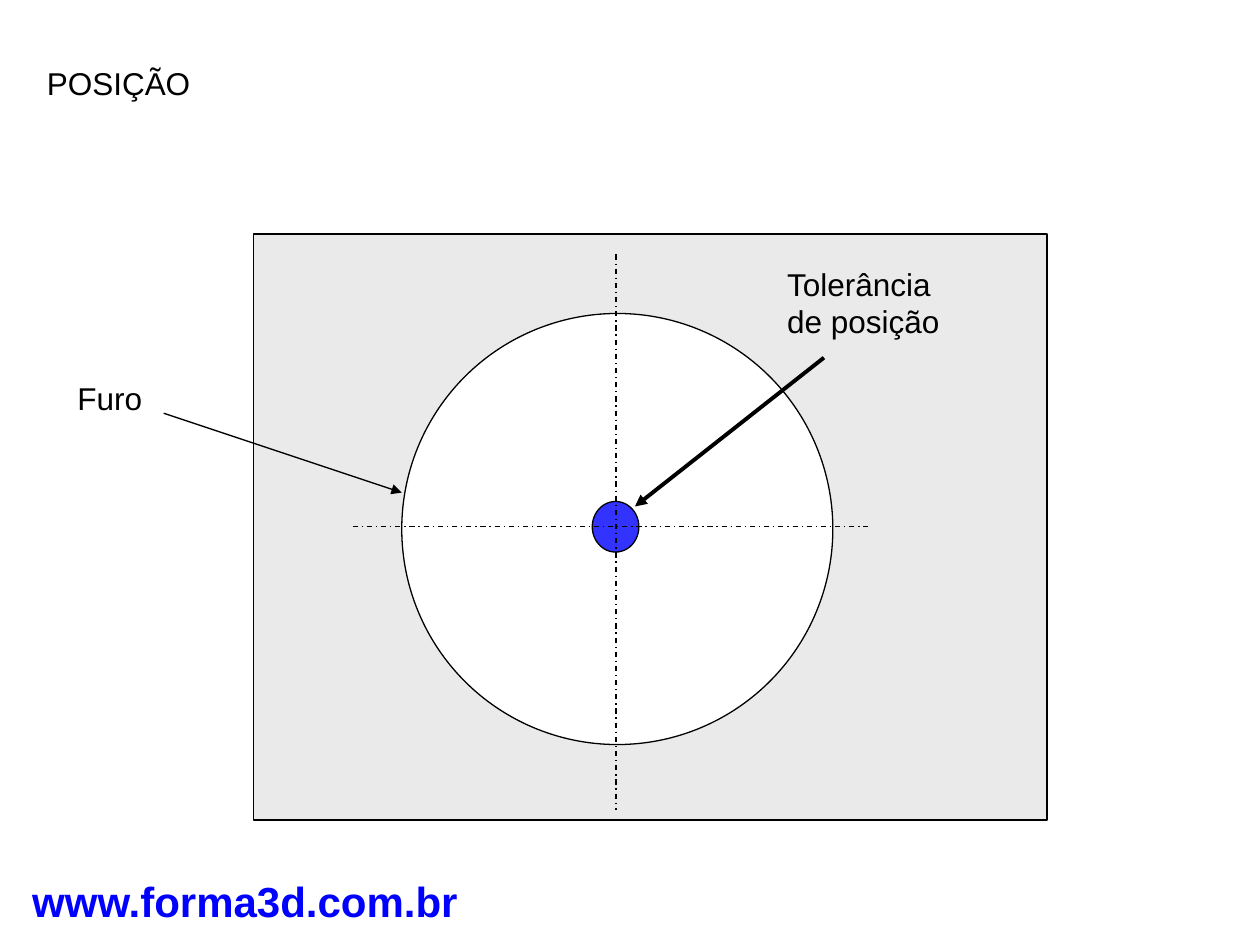
from dataclasses import dataclass

from lxml.etree import SubElement
from pptx import Presentation
from pptx.dml.color import RGBColor
from pptx.enum.dml import MSO_LINE_DASH_STYLE as Dash
from pptx.enum.shapes import MSO_CONNECTOR, MSO_SHAPE as Shape
from pptx.enum.text import MSO_ANCHOR as Anchor, PP_ALIGN as Align
from pptx.oxml.ns import qn
from pptx.util import Cm, Pt


@dataclass(frozen=True)
class Theme:
    font: str = "Arial"
    ink: str = "000000"
    plate: str = "EAEAEA"
    hole: str = "FFFFFF"
    accent: str = "0000FF"
    text_size: float = 18
    address_size: float = 24
    thin: float = 0.75
    thick: float = 2.25


class Drawing:
    def __init__(self, slide, theme):
        self.slide = slide
        self.theme = theme

    def format_text(self, box, text, align, size, color, bold, wrap):
        frame = box.text_frame
        frame.text = text
        frame.word_wrap = wrap
        frame.vertical_anchor = Anchor.TOP
        for paragraph in frame.paragraphs:
            paragraph.alignment = align
            for run in paragraph.runs:
                run.font.name = self.theme.font
                run.font.size = Pt(size)
                run.font.bold = bold
                run.font.color.rgb = RGBColor.from_string(color)

    def title(self, text, left, top, width, height):
        heading = self.slide.shapes.title
        heading.left, heading.top = Cm(left), Cm(top)
        heading.width, heading.height = Cm(width), Cm(height)
        self.format_text(heading, text, Align.LEFT, self.theme.text_size,
                         self.theme.ink, False, True)

    def label(self, text, left, top, width, height, align=Align.CENTER,
              size=None, color=None, bold=False):
        box = self.slide.shapes.add_textbox(
            Cm(left), Cm(top), Cm(width), Cm(height))
        self.format_text(box, text, align, size or self.theme.text_size,
                         color or self.theme.ink, bold, False)

    def area(self, kind, left, top, width, height, color, opacity=100):
        area = self.slide.shapes.add_shape(
            kind, Cm(left), Cm(top), Cm(width), Cm(height))
        area.shadow.inherit = False
        area.fill.solid()
        area.fill.fore_color.rgb = RGBColor.from_string(color)
        if opacity < 100:
            fill_color = area.fill._xPr.find(qn("a:solidFill"))[0]
            SubElement(fill_color, qn("a:alpha"), val=str(opacity * 1000))
        area.line.color.rgb = RGBColor.from_string(self.theme.ink)
        area.line.width = Pt(self.theme.thin)

    def line(self, start, end, weight=None, dash=None, arrow=False):
        stroke = self.slide.shapes.add_connector(
            MSO_CONNECTOR.STRAIGHT, *map(Cm, start + end))
        stroke.line.color.rgb = RGBColor.from_string(self.theme.ink)
        stroke.line.width = Pt(weight or self.theme.thin)
        if dash:
            stroke.line.dash_style = dash
        if arrow:
            SubElement(stroke.line._get_or_add_ln(), qn("a:tailEnd"),
                       type="triangle")
        SubElement(stroke._element.spPr, qn("a:effectLst"))


def main():
    theme = Theme()
    deck = Presentation()
    deck.slide_width, deck.slide_height = Cm(25.4), Cm(19.05)
    drawing = Drawing(deck.slides.add_slide(deck.slide_layouts[5]), theme)

    # Heading and web address
    drawing.title("POSIÇÃO", 0.69, 1.17, 9.02, 1.02)
    drawing.label("www.forma3d.com.br", 0.38, 17.53, 9.12, 1.27,
                  size=theme.address_size, color=theme.accent, bold=True)

    # Plate with its hole
    drawing.area(Shape.RECTANGLE, 5.11, 4.72, 16, 11.81, theme.plate)
    drawing.area(Shape.OVAL, 8.1, 6.32, 8.69, 8.69, theme.hole)

    # Position tolerance: label, arrow and zone
    drawing.label("Tolerância\vde posição", 15.62, 5.21, 3.66, 1.78,
                  align=Align.LEFT)
    drawing.line((16.61, 7.21), (12.8, 10.21), theme.thick, arrow=True)
    drawing.area(Shape.OVAL, 11.94, 10.11, 0.94, 1.02, theme.accent, opacity=80)

    # Hole label and arrow
    drawing.label("Furo", 1.3, 7.52, 1.83, 1.02)
    drawing.line((3.3, 8.33), (8.1, 9.93), arrow=True)

    # Centre lines
    center_x, center_y = 12.42, 10.62
    drawing.line((center_x, 5.13), (center_x, 16.33), dash=Dash.DASH_DOT)
    drawing.line((7.11, center_y), (17.5, center_y), dash=Dash.DASH_DOT)

    deck.save("out.pptx")


if __name__ == "__main__":
    main()
